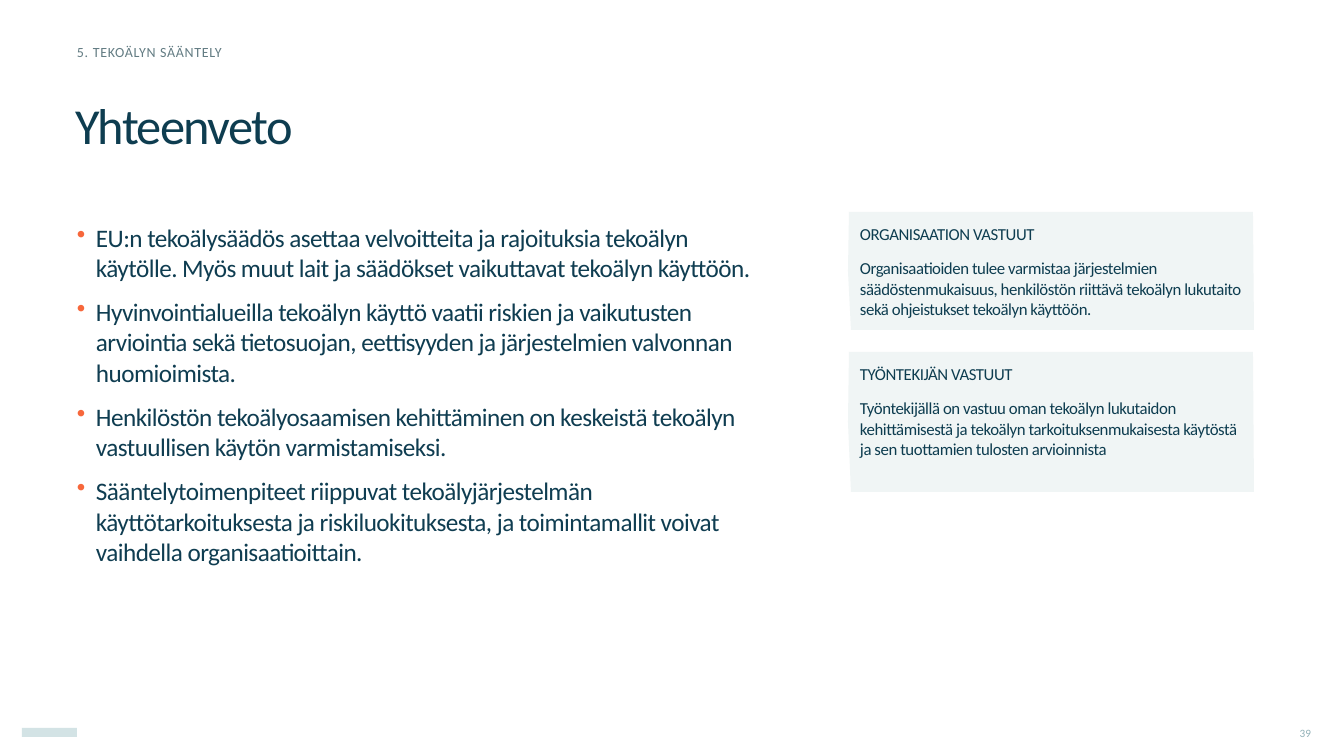
import pptx
import pptx.util
import pptx.dml.color
import pptx.enum.shapes
import pptx.enum.text
import pptx.oxml
import pptx.oxml.ns

SECTION = "5. TEKOÄLYN SÄÄNTELY"
TITLE = "Yhteenveto"
PAGE_NUMBER = "39"
SUMMARY = [
    "EU:n tekoälysäädös asettaa velvoitteita ja rajoituksia tekoälyn käytölle. "
    "Myös muut lait ja säädökset vaikuttavat tekoälyn käyttöön.",
    "Hyvinvointialueilla tekoälyn käyttö vaatii riskien ja vaikutusten arviointia "
    "sekä tietosuojan, eettisyyden ja järjestelmien valvonnan huomioimista.",
    "Henkilöstön tekoälyosaamisen kehittäminen on keskeistä tekoälyn vastuullisen "
    "käytön varmistamiseksi.",
    "Sääntelytoimenpiteet riippuvat tekoälyjärjestelmän käyttötarkoituksesta ja "
    "riskiluokituksesta, ja toimintamallit voivat vaihdella organisaatioittain.",
]
# Heading, text, card height in px
RESPONSIBILITIES = [
    ("ORGANISAATION VASTUUT",
     "Organisaatioiden tulee varmistaa järjestelmien säädöstenmukaisuus, henkilöstön "
     "riittävä tekoälyn lukutaito sekä ohjeistukset tekoälyn käyttöön.", 118),
    ("TYÖNTEKIJÄN VASTUUT",
     "Työntekijällä on vastuu oman tekoälyn lukutaidon kehittämisestä ja tekoälyn "
     "tarkoituksenmukaisesta käytöstä ja sen tuottamien tulosten arvioinnista", 140),
]

RGB = pptx.dml.color.RGBColor
NAVY = RGB(0x0E, 0x3D, 0x50)
BODY_NAVY = RGB(0x0F, 0x3D, 0x51)
SLATE = RGB(0x63, 0x7C, 0x83)
PAGE_BLUE = RGB(0x92, 0xB1, 0xB8)
MARK_BLUE = RGB(0xD3, 0xE3, 0xE5)
ORANGE = RGB(0xF7, 0x67, 0x3B)
CARD_TINT = RGB(0xF0, 0xF5, 0xF5)

FONT = "Calibri"
PX = 914400 / 100.8
CARD_LEFT, CARD_TOP, CARD_WIDTH, CARD_GAP, CARD_INSET = 848, 212, 406, 22, 12
BULLET_INDENT = 19
PARAGRAPH_GAP = 10

ALIGN = pptx.enum.text.PP_ALIGN
ANCHOR = pptx.enum.text.MSO_ANCHOR


def px(length):
    return pptx.util.Emu(round(length * PX))


def add_bullet(paragraph):
    properties = paragraph._p.get_or_add_pPr()
    properties.set("marL", str(px(BULLET_INDENT)))
    properties.set("indent", str(-px(BULLET_INDENT)))
    namespace = pptx.oxml.ns.nsdecls("a")
    for xml in (f'<a:buClr {namespace}><a:srgbClr val="{ORANGE}"/></a:buClr>',
                f'<a:buChar {namespace} char="•"/>'):
        properties.append(pptx.oxml.parse_xml(xml))


def write(frame, lines, size, color, tracking=0, inset=0, anchor=ANCHOR.TOP,
          align=ALIGN.LEFT, line_spacing=None, bulleted=False):
    frame.word_wrap = True
    frame.vertical_anchor = anchor
    frame.margin_left = frame.margin_right = px(inset)
    frame.margin_top = frame.margin_bottom = px(inset)
    for index, line in enumerate(lines):
        paragraph = frame.add_paragraph() if index else frame.paragraphs[0]
        if bulleted:
            add_bullet(paragraph)
        paragraph.alignment = align
        paragraph.line_spacing = line_spacing
        paragraph.space_before = pptx.util.Pt(PARAGRAPH_GAP if index else 0)
        run = paragraph.add_run()
        run.text = line
        run.font.name = FONT
        run.font.size = pptx.util.Pt(size)
        run.font.color.rgb = color
        run._r.get_or_add_rPr().set("spc", str(round(tracking * 100)))


def paint(shape, color):
    shape.shadow.inherit = False
    shape.fill.solid()
    shape.fill.fore_color.rgb = color
    shape.line.fill.background()


def add_card(shapes, top, height):
    """A rectangle with slightly uneven, hand-cut edges."""
    right, bottom = CARD_LEFT + CARD_WIDTH, top + height
    outline = shapes.build_freeform(CARD_LEFT + 3, bottom, scale=PX)
    outline.add_line_segments([
        (CARD_LEFT, top + height // 2), (CARD_LEFT + 1, top),
        (right - 1, top), (right, bottom),
    ])
    card = outline.convert_to_shape()
    paint(card, CARD_TINT)
    return card


def main():
    deck = pptx.Presentation()
    deck.slide_width, deck.slide_height = px(1344), px(756)
    shapes = deck.slides.add_slide(deck.slide_layouts[6]).shapes

    def add_text(left, top, width, height, lines, *style, **options):
        box = shapes.add_textbox(px(left), px(top), px(width), px(height))
        write(box.text_frame, lines, *style, **options)

    # Footer: plain mark and page number
    mark = shapes.add_shape(pptx.enum.shapes.MSO_SHAPE.RECTANGLE,
                            px(22), px(728), px(55), px(9))
    paint(mark, MARK_BLUE)
    add_text(1267, 723, 44, 20, [PAGE_NUMBER], 8, PAGE_BLUE,
             anchor=ANCHOR.MIDDLE, align=ALIGN.RIGHT)

    # Heading
    add_text(75, 69, 797, 119, [TITLE], 36, NAVY, tracking=-1.2,
             anchor=ANCHOR.MIDDLE, line_spacing=0.9)
    add_text(77, 37, 794, 29, [SECTION], 10, SLATE, tracking=0.5,
             anchor=ANCHOR.MIDDLE)

    # Summary bullets
    add_text(77, 222, 694, 440, SUMMARY, 18, BODY_NAVY, tracking=-0.4,
             bulleted=True)

    # Responsibility cards
    top = CARD_TOP
    for heading, text, height in RESPONSIBILITIES:
        card = add_card(shapes, top, height)
        write(card.text_frame, [heading, text], 12, NAVY, tracking=-0.3,
              inset=CARD_INSET)
        top += height + CARD_GAP

    deck.save("out.pptx")


if __name__ == "__main__":
    main()
